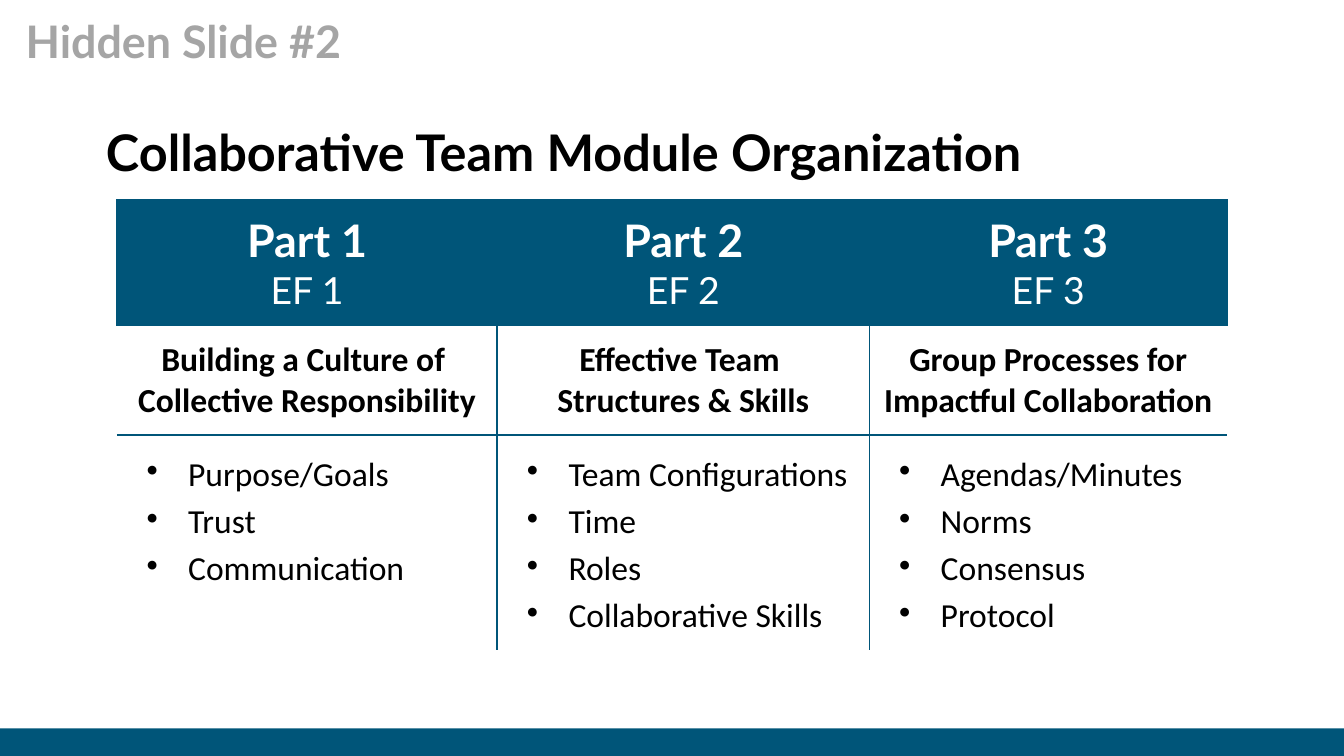
from lxml import etree
from pptx import Presentation
from pptx import util as u
from pptx.dml.color import RGBColor
from pptx.enum import shapes, text
from pptx.oxml.ns import qn

COLORS = {"teal": "005579", "gray": "A5A5A5", "black": "000000", "white": "FFFFFF"}
WIDTH, HEIGHT = u.Inches(10), u.Inches(5.625)
COLUMNS = (2.83, 2.77, 2.66)
ROWS = (0.92, 0.81, 1.58)
MARGIN = u.Inches(0.1)
PARTS = [
    ("Part 1\nEF 1", "Building a Culture of \nCollective Responsibility",
     "Purpose/Goals\nTrust\nCommunication"),
    ("Part 2\nEF 2", "Effective Team \nStructures & Skills",
     "Team Configurations\nTime\nRoles\nCollaborative Skills"),
    ("Part 3\nEF 3", "Group Processes for Impactful Collaboration ",
     "Agendas/Minutes\nNorms\nConsensus\nProtocol"),
]


def color(name):
    return RGBColor.from_string(COLORS[name])


def format_paragraph(paragraph, name, size, shade, bold, align):
    paragraph.alignment = align
    for run in paragraph.runs:
        font = run.font
        font.name, font.size, font.bold = name, u.Pt(size), bold
        font.color.rgb = color(shade)


def set_margins(target):
    target.margin_left = target.margin_right = MARGIN
    target.margin_top = target.margin_bottom = MARGIN


def place_heading(shape, box, wording, size, shade):
    shape.left, shape.top, shape.width, shape.height = box
    frame = shape.text_frame
    frame.text = wording
    frame.word_wrap = True
    frame.auto_size = text.MSO_AUTO_SIZE.NONE
    frame.vertical_anchor = text.MSO_ANCHOR.TOP
    set_margins(frame)
    format_paragraph(frame.paragraphs[0], "Lato", size, shade, True, text.PP_ALIGN.LEFT)


def add_footer_bar(slide, box):
    bar = slide.shapes.add_shape(shapes.MSO_SHAPE.RECTANGLE, *box)
    bar.shadow.inherit = False
    bar.fill.solid()
    bar.fill.fore_color.rgb = color("teal")
    bar.line.fill.background()


def add_borders(cell, sides):
    properties = cell._tc.get_or_add_tcPr()
    for side in "LRTB":
        line = etree.SubElement(properties, qn(f"a:ln{side}"))
        if side in sides:
            line.set("w", str(u.Pt(1)))
            fill = etree.SubElement(line, qn("a:solidFill"))
            etree.SubElement(fill, qn("a:srgbClr"), val=COLORS["teal"])
        else:
            line.set("w", "0")
            etree.SubElement(line, qn("a:noFill"))


def add_bullet(paragraph):
    paragraph.line_spacing = 1.15
    properties = paragraph._p.get_or_add_pPr()
    properties.set("marL", str(u.Inches(0.43)))
    properties.set("indent", str(u.Inches(-0.31)))
    bullet_color = etree.SubElement(properties, qn("a:buClr"))
    etree.SubElement(bullet_color, qn("a:srgbClr"), val=COLORS["black"])
    etree.SubElement(properties, qn("a:buChar"), char="•")


def cell_sides(row, column):
    if row == 0:
        return "LTR"
    sides = "B" if row == 1 else "T"
    if column > 0:
        sides += "L"
    if column < len(COLUMNS) - 1:
        sides += "R"
    return sides


def fill_cell(cell, row, column, wording):
    add_borders(cell, cell_sides(row, column))
    set_margins(cell)
    cell.vertical_anchor = text.MSO_ANCHOR.TOP
    if row == 0:
        cell.fill.solid()
        cell.fill.fore_color.rgb = color("teal")
    else:
        cell.fill.background()
    cell.text_frame.text = wording
    for index, paragraph in enumerate(cell.text_frame.paragraphs):
        if row == 0:
            format_paragraph(paragraph, "Lato", (24, 20)[index], "white",
                             index == 0, text.PP_ALIGN.CENTER)
        elif row == 1:
            format_paragraph(paragraph, "Calibri", 18, "black", True, text.PP_ALIGN.CENTER)
        else:
            format_paragraph(paragraph, "Calibri", 18, "black", False, text.PP_ALIGN.LEFT)
            add_bullet(paragraph)


def add_parts_table(slide, left, top):
    frame = slide.shapes.add_table(len(ROWS), len(COLUMNS), left, top,
                                   u.Inches(sum(COLUMNS)), u.Inches(sum(ROWS)))
    table = frame.table
    table.first_row = table.horz_banding = False
    style = table._tbl.tblPr.find(qn("a:tableStyleId"))
    style.text = "{2D5ABB26-0587-4C30-8999-92F81FD0307C}"
    for row, height in enumerate(ROWS):
        table.rows[row].height = u.Inches(height)
    for column, width in enumerate(COLUMNS):
        table.columns[column].width = u.Inches(width)
        for row, wording in enumerate(PARTS[column]):
            fill_cell(table.cell(row, column), row, column, wording)


def main():
    presentation = Presentation()
    presentation.slide_width, presentation.slide_height = WIDTH, HEIGHT
    slide = presentation.slides.add_slide(presentation.slide_layouts[5])
    bar_top = u.Inches(5.42)
    add_footer_bar(slide, (0, bar_top, WIDTH, HEIGHT - bar_top))
    title_box = (u.Inches(0.09), 0, u.Inches(8.62), u.Inches(0.67))
    place_heading(slide.shapes.title, title_box, "Hidden Slide #2", 24, "gray")
    heading_box = (u.Inches(0.69), u.Inches(0.8), u.Inches(8.62), u.Inches(0.71))
    place_heading(slide.shapes.add_textbox(*heading_box), heading_box,
                  "Collaborative Team Module Organization", 27, "black")
    add_parts_table(slide, u.Inches(0.87), u.Inches(1.49))
    presentation.save("out.pptx")


if __name__ == "__main__":
    main()
